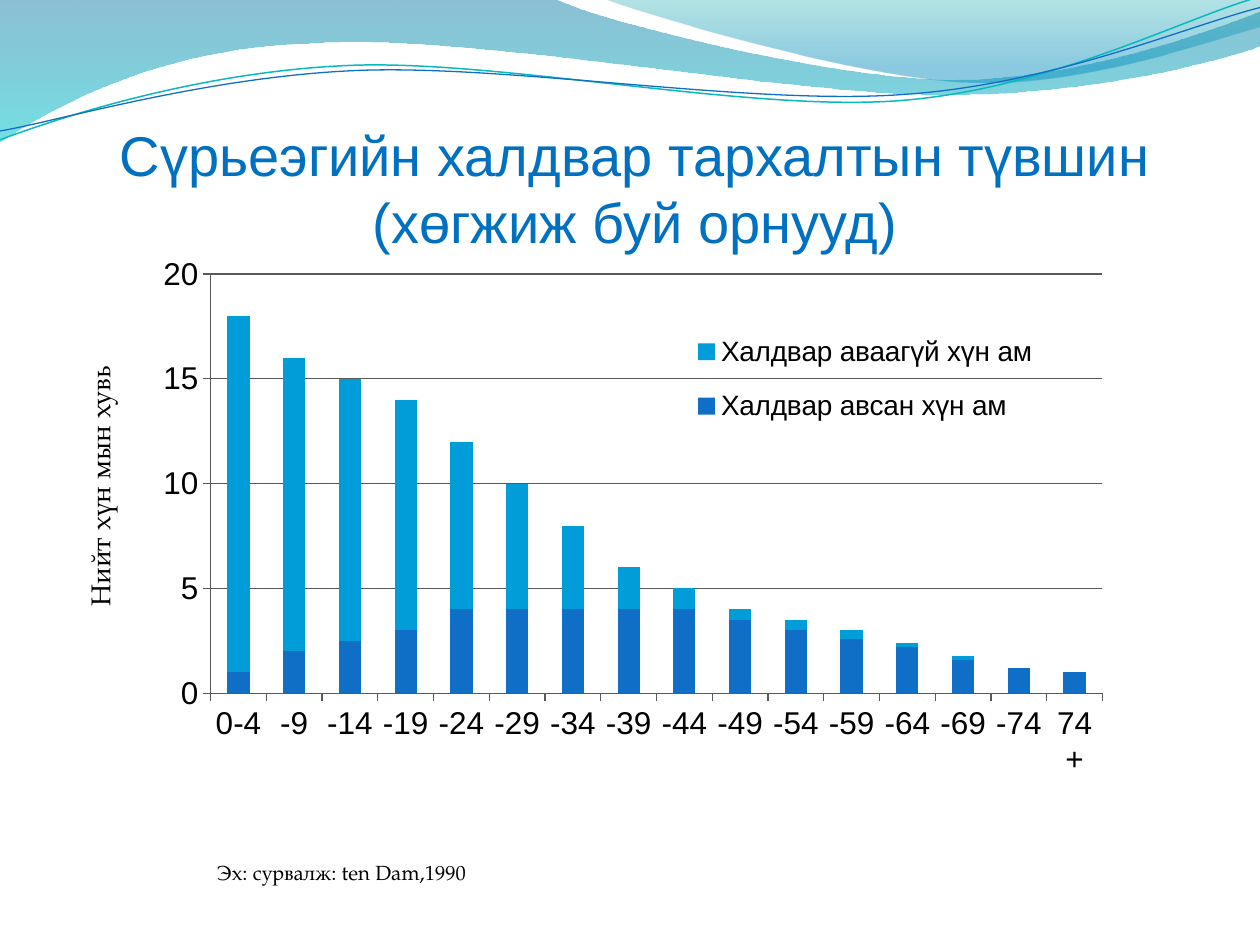
"""Builds a slide with a stacked column chart of tuberculosis infection by age group."""
from lxml import etree
from pptx import Presentation, util as u
from pptx.chart.data import CategoryChartData
from pptx.dml.color import RGBColor
from pptx.enum import chart as charts, text
from pptx.oxml import parse_xml
from pptx.oxml.ns import nsdecls, qn

COLORS = {"title": "0070C0", "text": "000000", "axis": "595959",
          "infected": "0F6FC6", "healthy": "009DD9", "teal": "0AB8BF", "blue": "0F6FC6"}

deck = Presentation()
deck.slide_width, deck.slide_height = u.Inches(10), u.Inches(7.5)
page = deck.slides.add_slide(deck.slide_layouts[6])
column, row = deck.slide_width / 10, deck.slide_height / 7.5


def place(*cells):
    return [round(cell * step) for cell, step in zip(cells, (column, row) * 2)]


def draw_wave(segments):
    builder = page.shapes.build_freeform(*place(*segments[0]))
    ends = [place(*segment[-2:]) for segment in segments[1:]]
    builder.add_line_segments(ends, close=segments[-1][-2:] == segments[0])
    wave = builder.convert_to_shape()
    wave.shadow.inherit = False
    lines = list(wave._element.iter(qn("a:lnTo")))
    for line, segment in zip(lines, segments[1:]):
        if len(segment) == 6:
            line.tag = qn("a:cubicBezTo")
            for index, start in enumerate((0, 2)):
                x, y = place(*segment[start:start + 2])
                handle = etree.Element(qn("a:pt"), x=str(x - wave.left), y=str(y - wave.top))
                line.insert(index, handle)
    return wave


bands = [
    ([(0, 0), (4.4, -0.01), (4.76, 0.17, 6.64, 0.63, 7.58, 0.63),
      (8.53, 0.63, 9.58, 0.26, 10, 0.09), (10.01, 0.36),
      (9.83, 0.44, 8.7, 0.76, 7.46, 0.75), (6.22, 0.75, 3.82, 0.28, 2.57, 0.34),
      (1.29, 0.36, 0.46, 0.83, -0.01, 1.13), (0, 0)],
     [(0, "0074A1", 45), (1, "00C6CF", 55)]),
    ([(4.79, -0.01), (5.09, 0.11, 6.82, 0.62, 7.69, 0.65),
      (8.56, 0.69, 9.61, 0.32, 10, 0.21), (10, 0), (4.79, -0.01)],
     [(0, "00A1A9", 30), (0.8, "008BBF", 45)]),
]
for segments, stops in bands:
    band = draw_wave(segments)
    band.line.fill.background()
    band.fill.gradient()
    band.fill.gradient_angle = 270
    for stop, (position, color, opacity) in zip(band.fill.gradient_stops, stops):
        stop.position = position
        stop.color.rgb = RGBColor.from_string(color)
    for node, (position, color, opacity) in zip(band._element.iter(qn("a:srgbClr")), stops):
        etree.SubElement(node, qn("a:alpha"), val=str(opacity * 1000))

strands = [
    ("teal", 0.85, [(0, 1.11), (0.48, 0.93, 1.58, 0.57, 2.77, 0.52),
                    (3.95, 0.47, 5.93, 0.89, 7.13, 0.8), (8.33, 0.71, 9.38, 0.15, 9.98, -0.02)]),
    ("blue", 0.75, [(0, 1.04), (0.47, 0.96, 1.64, 0.61, 2.83, 0.56),
                    (4.03, 0.51, 5.97, 0.84, 7.17, 0.75), (8.36, 0.67, 9.41, 0.21, 10, 0.06)]),
]
for color, width, segments in strands:
    strand = draw_wave(segments)
    strand.fill.background()
    strand.line.color.rgb = RGBColor.from_string(COLORS[color])
    strand.line.width = u.Pt(width)

data = CategoryChartData()
data.categories = ["0-4", *(f"-{age}" for age in range(9, 75, 5)), "74+"]
data.add_series("Халдвар авсан хүн ам",
                [1, 2, 2.5, 3, 4, 4, 4, 4, 4, 3.5, 3, 2.6, 2.2, 1.6, 1.2, 1])
data.add_series("Халдвар аваагүй хүн ам",
                [17, 14, 12.5, 11, 8, 6, 4, 2, 1, 0.5, 0.5, 0.4, 0.2, 0.2, 0, 0])
chart = page.shapes.add_chart(charts.XL_CHART_TYPE.COLUMN_STACKED,
                              *place(1.09, 1.84, 8.08, 4.58), data).chart
chart.has_title = False
chart.has_legend = True
legend = chart.legend
legend.position = charts.XL_LEGEND_POSITION.RIGHT
legend.include_in_layout = False
for font, size in ((chart.font, 18), (legend.font, 16)):
    font.name, font.size = "Arial", u.Pt(size)
    font.color.rgb = RGBColor.from_string(COLORS["text"])

plot = chart.plots[0]
plot.gap_width, plot.overlap, plot.vary_by_categories = 150, 100, False
for series, color in zip(plot.series, ("infected", "healthy")):
    series.format.fill.solid()
    series.format.fill.fore_color.rgb = RGBColor.from_string(COLORS[color])

values = chart.value_axis
scale = {"minimum_scale": 0, "maximum_scale": 20, "major_unit": 5, "has_major_gridlines": True}
for name, value in scale.items():
    setattr(values, name, value)
for axis in (values, chart.category_axis):
    axis.major_tick_mark = charts.XL_TICK_MARK.OUTSIDE
    axis.minor_tick_mark = charts.XL_TICK_MARK.NONE
for part in (values, chart.category_axis, values.major_gridlines):
    part.format.line.color.rgb = RGBColor.from_string(COLORS["axis"])
    part.format.line.width = u.Pt(0.75)

area = chart._chartSpace.chart.plotArea
frames = [(area, "inner", (0.07, 0.07, 0.88, 0.73)),
          (legend._element, None, (0.53, 0.14, 0.37, 0.23))]
frames[0] = (area, "inner", (0.072, 0.073, 0.876, 0.727))
for owner, target, shares in frames:
    for old in owner.findall(qn("c:layout")):
        owner.remove(old)
    inner = f'<c:layoutTarget val="{target}"/>' if target else ""
    modes = "".join(f'<c:{side}Mode val="edge"/>' for side in "xy")
    sizes = "".join(f'<c:{side} val="{share}"/>' for side, share in zip("xywh", shares))
    layout = parse_xml(f'<c:layout {nsdecls("c")}><c:manualLayout>{inner}{modes}{sizes}'
                       '</c:manualLayout></c:layout>')
    owner.insert(0 if target else 1, layout)

labels = [
    ("Сүрьеэгийн халдвар тархалтын түвшин (хөгжиж буй орнууд)", (0.5, 0.77, 9.08, 1.25),
     "Arial", 32, "title", "horz",
     {"vertical_anchor": text.MSO_ANCHOR.BOTTOM, "margin_left": 0, "margin_right": 0,
      "margin_bottom": 0}),
    ("Нийт хүн мын хувь ", (0.5, 2.75, 0.58, 2.17), "TeX Gyre Pagella", 15.6, "text", "vert270",
     {"vertical_anchor": text.MSO_ANCHOR.MIDDLE}),
    ("Эх: сурвалж: ten Dam,1990", (1, 6.67, 3.42, 0.5), "TeX Gyre Pagella", 11.7, "text", "horz",
     {"vertical_anchor": text.MSO_ANCHOR.MIDDLE}),
]
for wording, cells, face, size, color, direction, settings in labels:
    box = page.shapes.add_textbox(*place(*cells)).text_frame
    box.word_wrap = True
    for name, value in settings.items():
        setattr(box, name, value)
    box._txBody.bodyPr.set("vert", direction)
    para = box.paragraphs[0]
    para.alignment = text.PP_ALIGN.CENTER
    span = para.add_run()
    span.text = wording
    span.font.name, span.font.size = face, u.Pt(size)
    span.font.color.rgb = RGBColor.from_string(COLORS[color])

deck.save("out.pptx")
